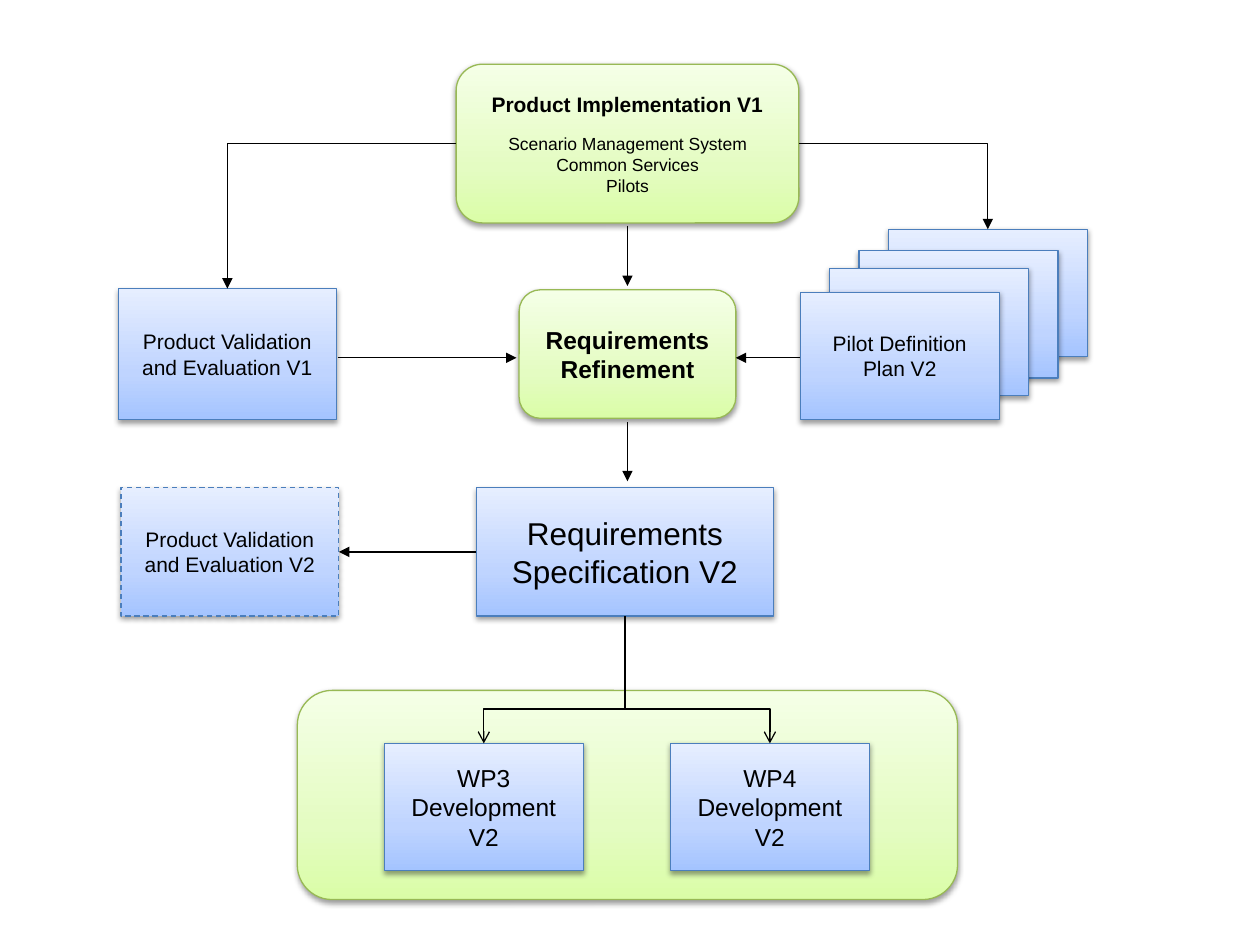
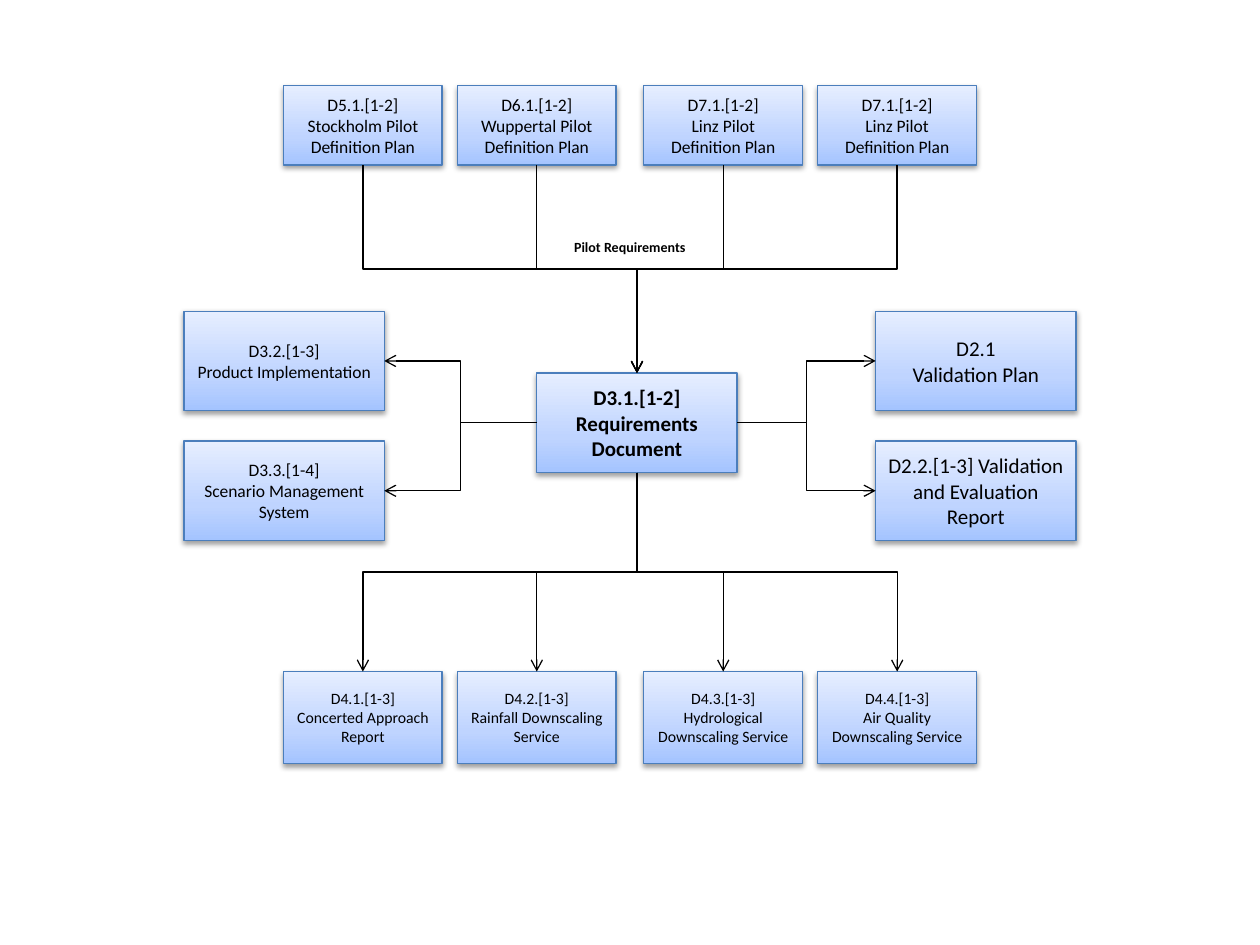
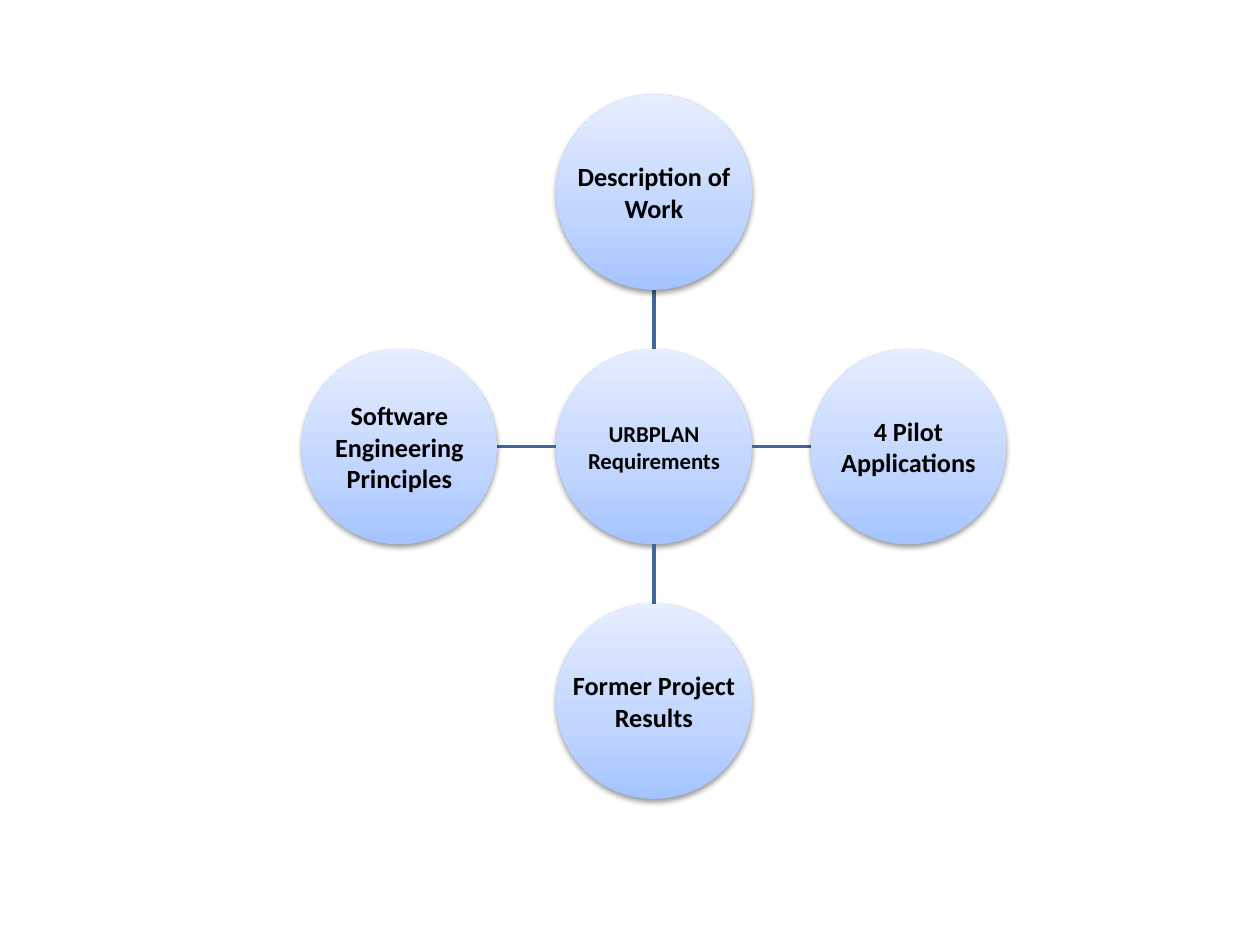
"""Build three diagrams of a project's requirements process."""
import dataclasses

import lxml.etree
import pptx
import pptx.dml.color
import pptx.enum.dml
import pptx.enum.shapes
import pptx.enum.text
import pptx.oxml.ns
import pptx.util

SHAPES = pptx.enum.shapes.MSO_SHAPE
qn = pptx.oxml.ns.qn


@dataclasses.dataclass(frozen=True)
class Theme:
    """Colours, type sizes and line widths of the deck."""
    ink: str = "000000"
    spoke: str = "3F6797"
    blue: tuple = ("A4C4FF", "BFD4FF", "E6EEFF")
    blue_edge: str = "4B7EBC"
    green: tuple = ("DAFDA7", "E4FCC2", "F5FFE7")
    green_edge: str = "98B955"
    stops: tuple = (0, 35000, 100000)
    tiny: int = 8
    fine: int = 9
    small: int = 10
    body: int = 12
    hub: int = 13
    large: int = 14
    circle: int = 15
    title: int = 18
    thin: float = 0.75
    thick: float = 2


THEME = Theme()


@dataclasses.dataclass(frozen=True)
class Area:
    """A rectangle in grid columns and rows."""
    left: float
    top: float
    width: float
    height: float

    @property
    def north(self):
        return self.left + self.width / 2, self.top

    @property
    def south(self):
        return self.left + self.width / 2, self.top + self.height

    @property
    def west(self):
        return self.left, self.top + self.height / 2

    @property
    def east(self):
        return self.left + self.width, self.top + self.height / 2


def add_node(parent, tag, **attributes):
    """Append a drawing element with attributes and return it."""
    node = lxml.etree.SubElement(parent, qn(tag))
    for name, value in attributes.items():
        node.set(name, str(value))
    return node


def write_text(frame, text, font="Calibri", size=THEME.body, bold=False, gap=0):
    """Add one centred paragraph for each line of text."""
    frame.word_wrap = True
    for index, line in enumerate(text.split("\n")):
        para = frame.add_paragraph() if frame.text else frame.paragraphs[0]
        para.alignment = pptx.enum.text.PP_ALIGN.CENTER
        if gap and index == 0:
            para.space_before = pptx.util.Pt(gap)
        span = para.add_run()
        span.text = line
        span.font.name = font
        span.font.size = pptx.util.Pt(size)
        span.font.bold = bold
        span.font.color.rgb = pptx.dml.color.RGBColor.from_string(THEME.ink)


class Diagram:
    """Draws styled elements on the current page of a deck."""
    columns, rows = 100, 75

    def __init__(self, deck):
        self.deck = deck
        self.page = None
        self.font = None

    def new_page(self, font):
        """Start a blank page whose text uses the given font."""
        self.page = self.deck.slides.add_slide(self.deck.slide_layouts[6])
        self.font = font

    def scale(self, x, y):
        """Turn columns and rows into slide lengths."""
        return (round(x * self.deck.slide_width / self.columns),
                round(y * self.deck.slide_height / self.rows))

    def place(self, area):
        """Turn an area into left, top, width and height."""
        return self.scale(area.left, area.top) + self.scale(area.width, area.height)

    def box(self, area, text="", kind=SHAPES.RECTANGLE, colours=THEME.blue,
            edge=THEME.blue_edge, dashed=False, **style):
        """Draw a shaded shape with a soft shadow and return it."""
        box = self.page.shapes.add_shape(kind, *self.place(area))
        box.fill.gradient()
        box.fill.gradient_angle = 90
        properties = box._element.spPr
        stops = properties.find(".//" + qn("a:gsLst"))
        stops.clear()
        for position, colour in zip(THEME.stops, colours):
            add_node(add_node(stops, "a:gs", pos=position), "a:srgbClr", val=colour)
        if edge:
            box.line.color.rgb = pptx.dml.color.RGBColor.from_string(edge)
            box.line.width = pptx.util.Pt(THEME.thin)
        else:
            box.line.fill.background()
        if dashed:
            box.line.dash_style = pptx.enum.dml.MSO_LINE.DASH
        box.shadow.inherit = False
        shadow = add_node(properties.find(qn("a:effectLst")), "a:outerShdw", blurRad=40000,
                          dist=20000, dir=5400000, rotWithShape=0)
        add_node(add_node(shadow, "a:srgbClr", val=THEME.ink), "a:alpha", val=38000)
        box.text_frame.vertical_anchor = pptx.enum.text.MSO_ANCHOR.MIDDLE
        if text:
            write_text(box.text_frame, text, font=self.font, **style)
        return box

    def stage(self, area, text="", **style):
        """Draw a green rounded box and return it."""
        return self.box(area, text, kind=SHAPES.ROUNDED_RECTANGLE, colours=THEME.green,
                        edge=THEME.green_edge, **style)

    def label(self, area, text, middle=False, **style):
        """Write text without a shape around it."""
        frame = self.page.shapes.add_textbox(*self.place(area)).text_frame
        if middle:
            frame.vertical_anchor = pptx.enum.text.MSO_ANCHOR.MIDDLE
            inset = pptx.util.Inches(0.01)
            frame.margin_left = frame.margin_right = inset
            frame.margin_top = frame.margin_bottom = inset
        write_text(frame, text, font=self.font, **style)

    def circle(self, area, text, size):
        """Draw a borderless circle with a bold caption."""
        self.box(area, kind=SHAPES.OVAL, edge=None)
        self.label(area, text, middle=True, size=size, bold=True)

    def link(self, start, end, route="straight", arrow="triangle", bend=0.5,
             colour=THEME.ink, width=THEME.thin):
        """Connect two points by a straight, across, down or corner route."""
        kinds = pptx.enum.shapes.MSO_CONNECTOR
        kind = kinds.STRAIGHT if route == "straight" else kinds.ELBOW
        (x1, y1), (x2, y2) = start, end
        turn = 0
        if route == "down":
            middle_x, middle_y = (x1 + x2) / 2, (y1 + y2) / 2
            reach, spread = (y2 - y1) / 2, abs(x2 - x1) / 2
            turn = 270 if x2 > x1 else 90
            side = reach if x2 > x1 else -reach
            x1, x2 = middle_x + side, middle_x - side
            y1, y2 = middle_y - spread, middle_y + spread
        link = self.page.shapes.add_connector(kind, *self.scale(x1, y1), *self.scale(x2, y2))
        link.line.color.rgb = pptx.dml.color.RGBColor.from_string(colour)
        link.line.width = pptx.util.Pt(width)
        properties = link._element.spPr
        geometry = properties.find(qn("a:prstGeom"))
        if turn:
            properties.find(qn("a:xfrm")).set("rot", str(turn * 60000))
        if route == "corner":
            geometry.set("prst", "bentConnector2")
        elif bend != 0.5:
            add_node(geometry.find(qn("a:avLst")), "a:gd", name="adj1",
                     fmla=f"val {round(bend * 100000)}")
        if arrow:
            add_node(properties.find(qn("a:ln")), "a:tailEnd", type=arrow)
        add_node(properties, "a:effectLst")


def draw_refinement(diagram):
    """Draw the flow from the first product version to the next."""
    diagram.new_page("Arial")
    product = Area(36.2, 5.1, 27.2, 12.6)
    refinement = Area(41.2, 23, 17.2, 10.2)
    specification = Area(37.8, 38.7, 23.6, 10.2)
    validation = Area(9.4, 22.9, 17.3, 10.4)
    next_validation = Area(9.6, 38.7, 17.3, 10.2)
    pilots = [Area(70.5 - 2.33 * index, top, 15.8, 10.1)
              for index, top in enumerate((18.2, 19.9, 21.3, 23.2))]
    packages = {"WP3": Area(30.5, 59, 15.8, 10.1), "WP4": Area(53.2, 59, 15.8, 10.1)}

    diagram.box(specification, "Requirements\nSpecification V2", size=THEME.title)
    for pilot in pilots[:-1]:
        diagram.box(pilot)
    diagram.box(pilots[-1], "Pilot Definition Plan V2")
    diagram.stage(Area(23.6, 54.8, 52.4, 16.6))
    summary = diagram.stage(product, "Product Implementation V1", bold=True)
    write_text(summary.text_frame, "Scenario Management System\nCommon Services\nPilots",
               font=diagram.font, size=THEME.small, gap=9)
    diagram.stage(refinement, "Requirements\nRefinement", size=THEME.large, bold=True)
    diagram.box(validation, "Product Validation and Evaluation V1")
    diagram.box(next_validation, "Product Validation and Evaluation V2", dashed=True)

    for name, area in packages.items():
        diagram.box(area, f"{name} Development\nV2", size=THEME.large)
        diagram.link(specification.south, area.north, "down", arrow="arrow", bend=0.73)
    diagram.link(product.east, pilots[0].north, "corner")
    diagram.link(product.west, validation.north, "corner")
    for top, bottom in ((17.9, 22.7), (33.5, 38.2)):
        diagram.link((49.8, top), (49.8, bottom))
    diagram.link((26.8, 28.4), (41, 28.4))
    diagram.link((63.5, 28.4), (58.4, 28.4))
    diagram.link(specification.west, next_validation.east)


def draw_deliverables(diagram):
    """Draw the deliverables around the requirements document."""
    diagram.new_page("Calibri")
    lefts = (22.5, 36.3, 51.1, 64.9)
    plans = ("D5.1.[1-2]\nStockholm Pilot Definition Plan",
             "D6.1.[1-2]\nWuppertal Pilot Definition Plan",
             "D7.1.[1-2]\nLinz Pilot Definition Plan",
             "D7.1.[1-2]\nLinz Pilot Definition Plan")
    services = ("D4.1.[1-3]\nConcerted Approach Report",
                "D4.2.[1-3]\nRainfall Downscaling Service",
                "D4.3.[1-3]\nHydrological Downscaling Service",
                "D4.4.[1-3]\nAir Quality Downscaling Service")
    implementations = ("D3.2.[1-3]\nProduct Implementation",
                       "D3.3.[1-4]\nScenario Management System")
    validations = ("D2.1\nValidation Plan", "D2.2.[1-3] Validation and Evaluation Report")
    document = Area(42.6, 29.6, 15.9, 7.9)

    diagram.label(Area(42.6, 18.4, 14.8, 2.4), "Pilot Requirements",
                  size=THEME.tiny, bold=True)
    diagram.box(document, "D3.1.[1-2]\nRequirements Document", bold=True)
    for left, plan, service in zip(lefts, plans, services):
        above, below = Area(left, 6.8, 12.6, 6.3), Area(left, 53.3, 12.6, 7.3)
        diagram.box(above, plan, size=THEME.small)
        diagram.box(below, service, size=THEME.fine)
        diagram.link(above.south, document.north, "down", arrow="arrow")
        diagram.link(document.south, below.north, "down", arrow="arrow")
    for top, implementation, validation in zip((24.7, 35), implementations, validations):
        before, after = Area(14.6, top, 15.9, 7.9), Area(69.5, top, 15.9, 7.9)
        diagram.box(before, implementation, size=THEME.small)
        diagram.box(after, validation)
        diagram.link(document.west, before.east, "across", arrow="arrow")
        diagram.link(document.east, after.west, "across", arrow="arrow")


def draw_sources(diagram):
    """Draw the four sources of the requirements around their hub."""
    diagram.new_page("Calibri")
    x, y, radius, step = 51.9, 35.45, 7.75, 20.2
    sources = {"Description of Work": (0, -1), "4 Pilot Applications": (1, 0),
               "Former Project Results": (0, 1), "Software Engineering Principles": (-1, 0)}

    def circle_at(across, down):
        return Area(x + across * step - radius, y + down * step - radius,
                    2 * radius, 2 * radius)

    diagram.circle(circle_at(0, 0), "URBPLAN Requirements", THEME.hub)
    for text, (across, down) in sources.items():
        near, far = ((x + across * reach, y + down * reach)
                     for reach in (radius, step - radius))
        diagram.link(near, far, arrow=None, colour=THEME.spoke, width=THEME.thick)
        diagram.circle(circle_at(across, down), text, THEME.circle)


def main():
    """Build and save the deck."""
    deck = pptx.Presentation()
    deck.slide_width = pptx.util.Inches(10)
    deck.slide_height = pptx.util.Inches(7.5)
    diagram = Diagram(deck)
    draw_refinement(diagram)
    draw_deliverables(diagram)
    draw_sources(diagram)
    deck.save("out.pptx")


if __name__ == "__main__":
    main()
